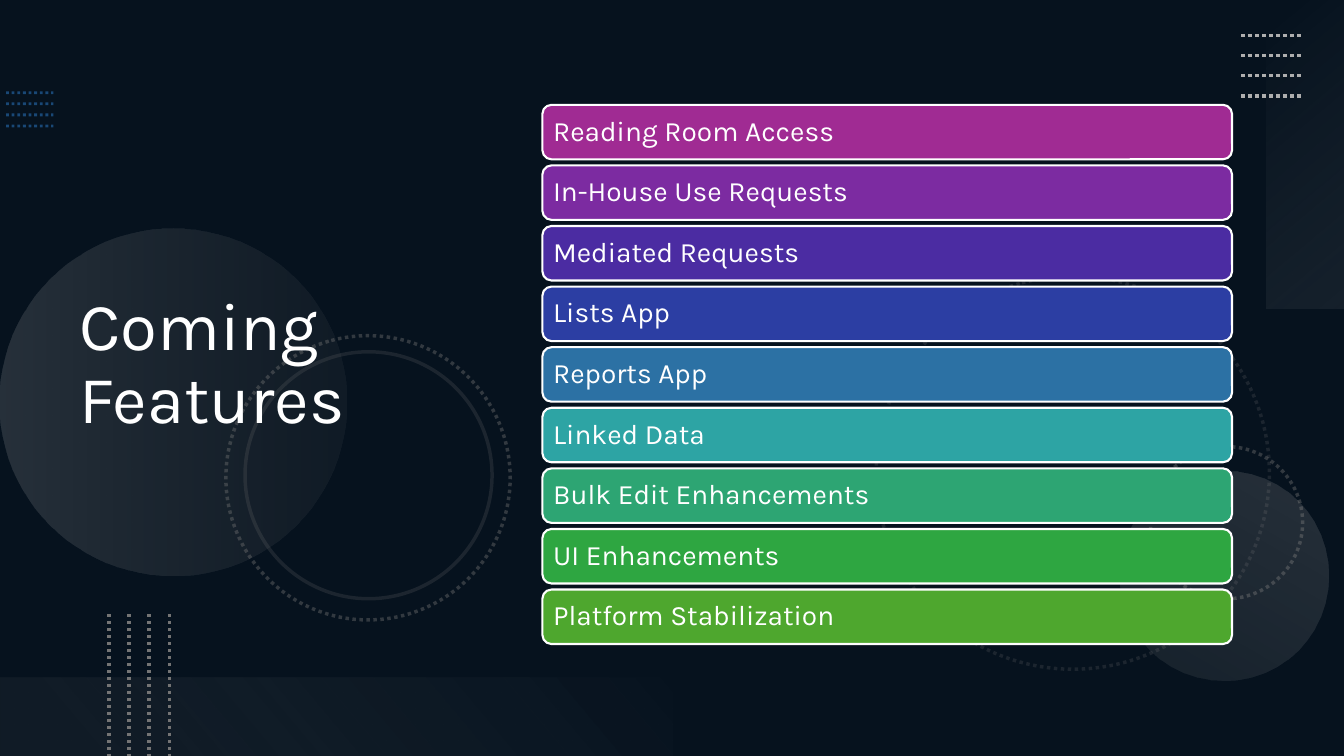
from pptx import Presentation
from pptx.dml.color import RGBColor
from pptx.enum.dml import MSO_LINE
from pptx.enum.shapes import MSO_CONNECTOR, MSO_SHAPE
from pptx.enum.text import MSO_ANCHOR, PP_ALIGN
from pptx.oxml import parse_xml
from pptx.oxml.ns import nsdecls, qn
from pptx.util import Inches, Pt
from lxml.etree import SubElement

FONT = "Karla"
WIDTH, HEIGHT = 13.33, 7.5
NAVY = RGBColor(0x0E, 0x28, 0x41)
BLACK = RGBColor(0x00, 0x00, 0x00)
WHITE = RGBColor(0xFF, 0xFF, 0xFF)
BLUE = RGBColor(0x2D, 0x7F, 0xCF)
GRAY = RGBColor(0x74, 0x74, 0x74)
SILVER = RGBColor(0xAE, 0xAE, 0xAE)
MIST = RGBColor(0xF6, 0xF6, 0xF6)
PALE = RGBColor(0xF1, 0xF1, 0xF1)

FEATURES = [
    ("Reading Room Access", RGBColor(0xA0, 0x2B, 0x93)),
    ("In-House Use Requests", RGBColor(0x7C, 0x2B, 0xA1)),
    ("Mediated Requests", RGBColor(0x4B, 0x2C, 0xA2)),
    ("Lists App", RGBColor(0x2C, 0x3E, 0xA3)),
    ("Reports App", RGBColor(0x2C, 0x71, 0xA4)),
    ("Linked Data", RGBColor(0x2D, 0xA4, 0xA4)),
    ("Bulk Edit Enhancements", RGBColor(0x2D, 0xA5, 0x73)),
    ("UI Enhancements", RGBColor(0x2E, 0xA6, 0x41)),
    ("Platform Stabilization", RGBColor(0x4E, 0xA7, 0x2E)),
]


def set_opacity(shape, percent):
    for color in shape.element.spPr.iter(qn("a:srgbClr")):
        SubElement(color, qn("a:alpha")).set("val", str(percent * 1000))


def add_plain(page, kind, box, rotation=0):
    shape = page.shapes.add_shape(kind, *map(Inches, box))
    shape.rotation = rotation
    shape.shadow.inherit = False
    shape.fill.background()
    shape.line.fill.background()
    return shape


def add_gradient(page, kind, box, rotation, angle, stops):
    shape = add_plain(page, kind, box, rotation)
    marks = "".join(
        f'<a:gs pos="{place * 1000}"><a:srgbClr val="{color}">'
        f'<a:alpha val="{opacity * 1000}"/></a:srgbClr></a:gs>'
        for place, color, opacity in stops
    )
    properties = shape.element.spPr
    properties.replace(
        properties.find(qn("a:noFill")),
        parse_xml(
            f'<a:gradFill {nsdecls("a")} rotWithShape="1"><a:gsLst>{marks}</a:gsLst>'
            f'<a:lin ang="{angle * 60000}" scaled="0"/></a:gradFill>'
        ),
    )


def add_ring(page, box, rotation, opacity, dotted=True):
    ring = add_plain(page, MSO_SHAPE.OVAL, box, rotation)
    ring.line.color.rgb = GRAY
    ring.line.width = Pt(2.5)
    if dotted:
        ring.line.dash_style = MSO_LINE.ROUND_DOT
    set_opacity(ring, opacity)


def add_dotted_lines(page, box, color, weight, opacity=100, vertical=False, count=4):
    left, top, width, height = box
    for index in range(count):
        share = index / (count - 1)
        if vertical:
            x = left + width * share
            ends = (x, top, x, top + height)
        else:
            y = top + height * share
            ends = (left, y, left + width, y)
        line = page.shapes.add_connector(MSO_CONNECTOR.STRAIGHT, *map(Inches, ends))
        line.line.color.rgb = color
        line.line.width = Pt(weight)
        line.line.dash_style = MSO_LINE.ROUND_DOT
        if opacity < 100:
            set_opacity(line, opacity)
        SubElement(line.element.spPr, qn("a:effectLst"))


def add_backdrop(page):
    page.background.fill.solid()
    page.background.fill.fore_color.rgb = NAVY
    shade = add_plain(page, MSO_SHAPE.RECTANGLE, (0, 0, WIDTH, HEIGHT))
    shade.fill.solid()
    shade.fill.fore_color.rgb = BLACK
    set_opacity(shade, 53)

    add_dotted_lines(page, (0.06, 0.92, 0.47, 0.33), BLUE, 2, opacity=50)
    add_ring(page, (8.69, 2.74, 3.9, 3.9), 75, 20)
    add_ring(page, (11.41, 4.43, 1.51, 1.51), 270, 40)
    add_gradient(page, MSO_SHAPE.OVAL, (0, 2.27, 3.44, 3.44), 270, 90,
                 [(0, SILVER, 20), (100, GRAY, 10)])
    add_gradient(page, MSO_SHAPE.OVAL, (11.1, 4.67, 2.08, 2.08), 210, 90,
                 [(0, SILVER, 10), (100, SILVER, 20)])
    add_ring(page, (2.24, 3.33, 2.82, 2.82), 75, 40)
    add_ring(page, (2.43, 3.49, 2.45, 2.45), 75, 20, dotted=False)
    add_gradient(page, MSO_SHAPE.RECTANGLE, (11.42, 1.14, 3.06, 0.78), 270, 140,
                 [(0, MIST, 0), (100, SILVER, 10)])
    add_dotted_lines(page, (12.31, 0.35, 0.6, 0.6), SILVER, 2.5)
    add_gradient(page, MSO_SHAPE.RECTANGLE, (0, 6.72, WIDTH / 2, 0.78), 180, 140,
                 [(10, GRAY, 10), (100, PALE, 0)])
    add_dotted_lines(page, (1.08, 6.09, 0.6, 1.41), GRAY, 2.5, vertical=True)


def write_text(frame, text, size):
    frame.word_wrap = True
    frame.vertical_anchor = MSO_ANCHOR.MIDDLE
    para = frame.paragraphs[0]
    para.text = text
    para.alignment = PP_ALIGN.LEFT
    para.line_spacing = 0.9
    para.font.name = FONT
    para.font.size = Pt(size)
    para.font.color.rgb = WHITE


def place_title(page, box, text):
    title = page.shapes.title
    title.left, title.top, title.width, title.height = map(Inches, box)
    write_text(title.text_frame, text, 48)
    title.element.getparent().append(title.element)


def add_feature_list(page, box, features):
    left, top, width, height = box
    pitch = height / (len(features) - 0.1)
    for row, (name, color) in enumerate(features):
        bar = add_plain(page, MSO_SHAPE.ROUNDED_RECTANGLE,
                        (left, top + row * pitch, width, pitch * 0.9))
        bar.fill.solid()
        bar.fill.fore_color.rgb = color
        bar.line.color.rgb = WHITE
        bar.line.width = Pt(1.5)
        write_text(bar.text_frame, name, 20)
        bar.text_frame.margin_left = bar.text_frame.margin_right = Inches(0.08)


def main():
    deck = Presentation()
    deck.slide_width, deck.slide_height = Inches(WIDTH), Inches(HEIGHT)
    page = deck.slides.add_slide(deck.slide_layouts[5])
    add_backdrop(page)
    place_title(page, (0.69, 0.54, 4.59, 6.17), "Coming Features")
    add_feature_list(page, (5.38, 1.04, 6.84, 5.35), FEATURES)
    deck.save("out.pptx")


if __name__ == "__main__":
    main()
